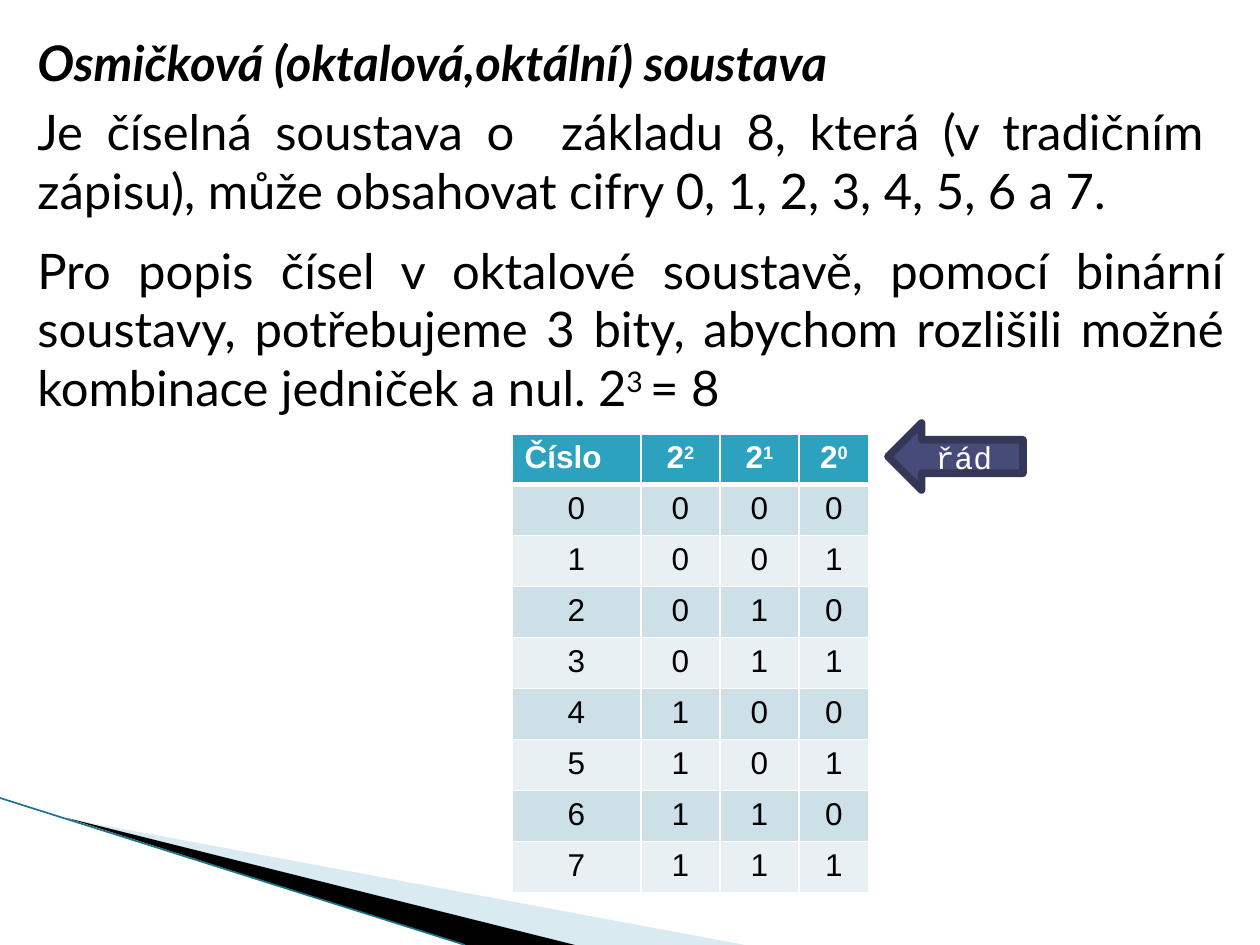
import dataclasses
import typing

import lxml.etree
import pptx
import pptx.dml.color
import pptx.enum.shapes
import pptx.enum.text
import pptx.oxml.ns
import pptx.util

Color = pptx.dml.color.RGBColor
Align = pptx.enum.text.PP_ALIGN

PX = pptx.util.Inches(1) // 126
BLACK = Color(0x00, 0x00, 0x00)
WHITE = Color(0xFF, 0xFF, 0xFF)
PALE_BLUE = Color(0xA0, 0xCB, 0xDC)
EDGE_TEAL = Color(0x1B, 0x75, 0x87)
HEADER_TEAL = Color(0x2D, 0xA2, 0xBF)
BANDS = (Color(0xCD, 0xE0, 0xE8), Color(0xE8, 0xF0, 0xF4))
ARROW_FILL = Color(0x47, 0x4B, 0x78)
ARROW_LINE = Color(0x35, 0x37, 0x59)


@dataclasses.dataclass(frozen=True)
class Area:
    left: int
    top: int
    width: int
    height: int

    def emu(self) -> tuple[int, ...]:
        return tuple(value * PX for value in dataclasses.astuple(self))


@dataclasses.dataclass(frozen=True)
class Wedge:
    points: tuple[tuple[int, int], ...]
    color: Color
    opacity: int


WEDGES = (
    Wedge(((69, 819), (745, 945), (575, 945)), PALE_BLUE, 40),
    Wedge(((67, 818), (575, 945), (465, 945)), BLACK, 100),
)
COLUMN_WIDTHS = (129, 79, 79, 70)
HEADER_HEIGHT, ROW_HEIGHT = 48, 51


def add_xml(parent: typing.Any, tag: str, **attributes: str) -> typing.Any:
    return lxml.etree.SubElement(parent, pptx.oxml.ns.qn(tag), attributes)


def add_span(para: typing.Any, text: str, *, size: int = 28, font: str = "Lato",
             color: Color = BLACK, bold: bool = False, italic: bool = False,
             raised: bool = False) -> None:
    span = para.add_run()
    span.text = text
    span.font.size = pptx.util.Pt(size)
    span.font.name = font
    span.font.bold = bold
    span.font.italic = italic
    span.font.color.rgb = color
    if raised:
        span.font._element.set("baseline", "30000")


def add_text_box(page: typing.Any, area: Area) -> typing.Any:
    frame = page.shapes.add_textbox(*area.emu()).text_frame
    frame.word_wrap = True
    return frame


def add_wedge(page: typing.Any, wedge: Wedge) -> None:
    start, *others = wedge.points
    builder = page.shapes.build_freeform(*start, scale=PX)
    builder.add_line_segments(others, close=True)
    shape = builder.convert_to_shape()
    shape.shadow.inherit = False
    shape.fill.solid()
    shape.fill.fore_color.rgb = wedge.color
    shape.line.fill.background()
    if wedge.opacity < 100:
        color = shape._element.spPr.find(".//" + pptx.oxml.ns.qn("a:srgbClr"))
        add_xml(color, "a:alpha", val=str(wedge.opacity * 1000))


def add_edge(page: typing.Any, start: tuple[int, int], end: tuple[int, int]) -> None:
    edge = page.shapes.add_connector(
        pptx.enum.shapes.MSO_CONNECTOR.STRAIGHT,
        *(value * PX for value in (*start, *end)))
    edge.line.color.rgb = EDGE_TEAL
    edge.line.width = pptx.util.Pt(0.95)
    add_xml(edge._element.spPr, "a:effectLst")


def format_cell(cell: typing.Any, fill: Color, top: int, bottom: int) -> None:
    properties = cell._tc.get_or_add_tcPr()
    for side, width in (("L", 1), ("R", 1), ("T", top), ("B", bottom)):
        border = add_xml(properties, f"a:ln{side}", w=str(pptx.util.Pt(width)))
        add_xml(add_xml(border, "a:solidFill"), "a:srgbClr", val=str(WHITE))
    cell.fill.solid()
    cell.fill.fore_color.rgb = fill


def add_octal_table(page: typing.Any, left: int, top: int) -> None:
    area = Area(left, top, sum(COLUMN_WIDTHS), HEADER_HEIGHT + 8 * ROW_HEIGHT)
    table = page.shapes.add_table(9, len(COLUMN_WIDTHS), *area.emu()).table
    for column, width in zip(table.columns, COLUMN_WIDTHS):
        column.width = width * PX
    for index, row in enumerate(table.rows):
        row.height = (ROW_HEIGHT if index else HEADER_HEIGHT) * PX

    # Header: the label, then the powers of two
    for index, cell in enumerate(table.rows[0].cells):
        format_cell(cell, HEADER_TEAL, 1, 3)
        para = cell.text_frame.paragraphs[0]
        style = dict(size=18, font="Arial", color=WHITE, bold=True)
        if index == 0:
            add_span(para, "Číslo", **style)
        else:
            para.alignment = Align.CENTER
            add_span(para, "2", **style)
            add_span(para, str(3 - index), raised=True, **style)

    # Body: each octal digit with its three bits
    for digit in range(8):
        for cell, text in zip(table.rows[digit + 1].cells, f"{digit}{digit:03b}"):
            format_cell(cell, BANDS[digit % 2], 1 if digit else 3, 1)
            para = cell.text_frame.paragraphs[0]
            para.alignment = Align.CENTER
            add_span(para, text, size=18, font="Arial")


def add_order_arrow(page: typing.Any, area: Area, text: str) -> None:
    arrow = page.shapes.add_shape(
        pptx.enum.shapes.MSO_SHAPE.DOWN_ARROW, *area.emu())
    arrow.rotation = 90
    arrow.shadow.inherit = False
    arrow.fill.solid()
    arrow.fill.fore_color.rgb = ARROW_FILL
    arrow.line.color.rgb = ARROW_LINE
    arrow.line.width = pptx.util.Pt(4.33)
    add_xml(arrow.line._ln, "a:round")
    frame = arrow.text_frame
    frame.vertical_anchor = pptx.enum.text.MSO_ANCHOR.MIDDLE
    frame._txBody.bodyPr.set("vert", "vert270")
    para = frame.paragraphs[0]
    para.alignment = Align.CENTER
    add_span(para, text, size=18, font="Courier New", color=WHITE)


def main() -> None:
    deck = pptx.Presentation()
    deck.slide_width, deck.slide_height = 1260 * PX, 945 * PX
    page = deck.slides.add_slide(deck.slide_layouts[6])

    # Corner decoration
    for wedge in WEDGES:
        add_wedge(page, wedge)
    add_edge(page, (0, 798), (465, 945))

    # Heading and definition
    frame = add_text_box(page, Area(25, 26, 1191, 202))
    add_span(frame.paragraphs[0], "Osmičková (oktalová,oktální) soustava",
             bold=True, italic=True)
    para = frame.add_paragraph()
    para.alignment = Align.JUSTIFY
    para.space_before = para.space_after = pptx.util.Pt(6)
    add_span(para, "Je číselná soustava o  základu 8, která (v tradičním zápisu), "
                   "může obsahovat cifry 0, 1, 2, 3, 4, 5, 6 a 7.")

    # Table of digits and bits
    add_octal_table(page, 512, 434)

    # Binary explanation
    para = add_text_box(page, Area(25, 234, 1211, 192)).paragraphs[0]
    para.alignment = Align.JUSTIFY
    add_span(para, "Pro popis čísel v oktalové soustavě, pomocí binární soustavy, "
                   "potřebujeme 3 bity, abychom rozlišili možné kombinace "
                   "jedniček a nul. 2")
    add_span(para, "3 ", raised=True)
    add_span(para, "= 8")

    # Arrow to the header row
    add_order_arrow(page, Area(922, 389, 67, 135), "řád")
    deck.save("out.pptx")


if __name__ == "__main__":
    main()
